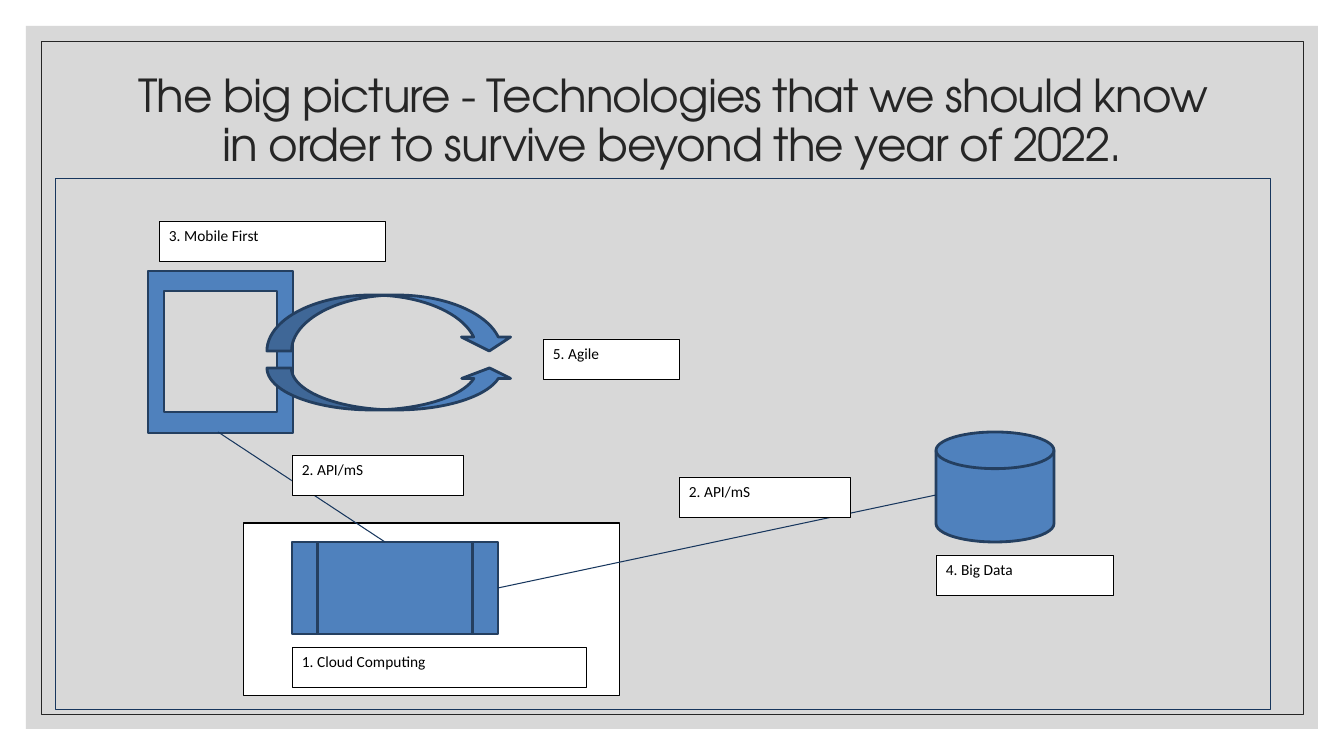
from dataclasses import dataclass

from pptx import Presentation
from pptx.dml.color import RGBColor
from pptx.enum.shapes import MSO_CONNECTOR, MSO_SHAPE
from pptx.enum.text import MSO_ANCHOR, MSO_AUTO_SIZE, PP_ALIGN
from pptx.oxml.ns import qn
from pptx.util import Emu, Pt
from lxml.etree import SubElement


@dataclass(frozen=True)
class Theme:
    grey: str = "BFBFBF"
    ink: str = "262626"
    navy: str = "17365D"
    blue: str = "4F81BD"
    edge: str = "243F60"
    white: str = "FFFFFF"
    black: str = "000000"
    head: str = "TeX Gyre Adventor"
    body: str = "Calibri"
    big: float = 32.4
    small: float = 11


# Content: boxes are left, top, width, height in px
TITLE = ("The big picture - Technologies that we should know "
         "in order to survive beyond the year of 2022.")
TITLE_BOX = (118, 71, 1109, 151)
BACK = (26, 26, 1292, 703)
BORDER = (41, 41, 1262, 673)
PANEL = (56, 179, 1215, 531)
PHONE = (148, 271, 145, 162)
SCREEN = (164, 291, 113, 121)
LOOPS = [  # box, flipped, adjustments
    ((267, 295, 247, 56), True, (0.44, 0.879, 0.25)),
    ((267, 368, 247, 42), False, (0.582, 1.164, 0.25)),
]
DISK = (936, 432, 118, 110)
CLOUD = (244, 523, 376, 173)
SERVER = (292, 542, 206, 92)
LABEL_H = 40
LABELS = [  # text, left, top, width
    ("3. Mobile First", 159, 221, 226),
    ("5. Agile", 543, 339, 136),
    ("1. Cloud Computing", 292, 647, 294),
    ("2. API/mS", 679, 477, 171),
    ("2. API/mS", 292, 455, 171),
    ("4. Big Data", 936, 555, 177),
]
PHONE_LINK = (218, 432, 385, 542)
DISK_LINK = (498, 588, 936, 495)

# Scale and page
SCALE = 914400 / 100.8
THEME = Theme()
deck = Presentation()
deck.slide_width, deck.slide_height = Emu(12192000), Emu(6858000)
slide = deck.slides.add_slide(deck.slide_layouts[5])
shapes = slide.shapes


def px(*nums):
    return [Emu(round(n * SCALE)) for n in nums]


def rgb(code):
    return RGBColor.from_string(code)


def paint(shape, fill, line, width):
    shape.shadow.inherit = False
    if fill:
        shape.fill.solid()
        shape.fill.fore_color.rgb = rgb(fill)
    else:
        shape.fill.background()
    if line:
        shape.line.color.rgb = rgb(line)
        shape.line.width = Pt(width)
    else:
        shape.line.fill.background()
    return shape


def draw(box, fill=None, line=None, width=0.5, kind=MSO_SHAPE.RECTANGLE):
    return paint(shapes.add_shape(kind, *px(*box)), fill, line, width)


def solid(box, kind):
    return draw(box, THEME.blue, THEME.edge, 2, kind)


def write(frame, text, font, size, color, align):
    para = frame.paragraphs[0]
    para.alignment = align
    run = para.add_run()
    run.text = text
    run.font.name, run.font.size = font, Pt(size)
    run.font.color.rgb = rgb(color)
    return run


def label(text, left, top, width):
    box = draw((left, top, width, LABEL_H), THEME.white, THEME.black)
    frame = box.text_frame
    frame.word_wrap = True
    frame.vertical_anchor = MSO_ANCHOR.TOP
    write(frame, text, THEME.body, THEME.small, THEME.black, PP_ALIGN.LEFT)


def link(ends):
    line = shapes.add_connector(MSO_CONNECTOR.STRAIGHT, *px(*ends))
    line.line.color.rgb = rgb(THEME.navy)
    line.line.width = Pt(0.75)
    SubElement(line.element.spPr, qn("a:effectLst"))
    return line


def corners(box):
    left, top, width, height = box
    right, base = left + width, top + height
    return [(left, top), (right, top), (right, base), (left, base)]


# Backdrop, with the fill at 60 % opacity
back = draw(BACK, THEME.grey)
tint = back.element.spPr.find(qn("a:solidFill")).find(qn("a:srgbClr"))
SubElement(tint, qn("a:alpha")).set("val", "60000")
draw(BORDER, line=THEME.ink)

# Title, brought in front of the backdrop
title = shapes.title
title.left, title.top, title.width, title.height = px(*TITLE_BOX)
frame = title.text_frame
frame.word_wrap = True
frame.auto_size = MSO_AUTO_SIZE.NONE
frame.vertical_anchor = MSO_ANCHOR.MIDDLE
frame.margin_bottom = px(54)[0]
run = write(frame, TITLE, THEME.head, THEME.big, THEME.ink, PP_ALIGN.CENTER)
run.font._element.set("spc", "-70")
frame.paragraphs[0].line_spacing = 0.9
back.element.getparent().append(title.element)

# Panel and phone, whose screen is a hole
draw(PANEL, line=THEME.navy, width=0.75)
outer = corners(PHONE)
hole = corners(SCREEN)
hole = hole[:1] + hole[:0:-1]
form = shapes.build_freeform(*outer[0], scale=SCALE)
form.add_line_segments(outer[1:], close=True)
form.move_to(*hole[0])
form.add_line_segments(hole[1:], close=True)
paint(form.convert_to_shape(), THEME.blue, THEME.edge, 2)

# Agile loop
for box, flip, adjust in LOOPS:
    arrow = solid(box, MSO_SHAPE.CURVED_UP_ARROW)
    for i, value in enumerate(adjust):
        arrow.adjustments[i] = value
    if flip:
        arrow.element.spPr.find(qn("a:xfrm")).set("flipV", "1")

# Data store, cloud and links
solid(DISK, MSO_SHAPE.FLOWCHART_MAGNETIC_DISK)
draw(CLOUD, THEME.white, THEME.black, 0.75)
server = solid(SERVER, MSO_SHAPE.FLOWCHART_PREDEFINED_PROCESS)
link(DISK_LINK).begin_connect(server, 3)
link(PHONE_LINK)

# Labels
for item in LABELS:
    label(*item)

deck.save("out.pptx")
